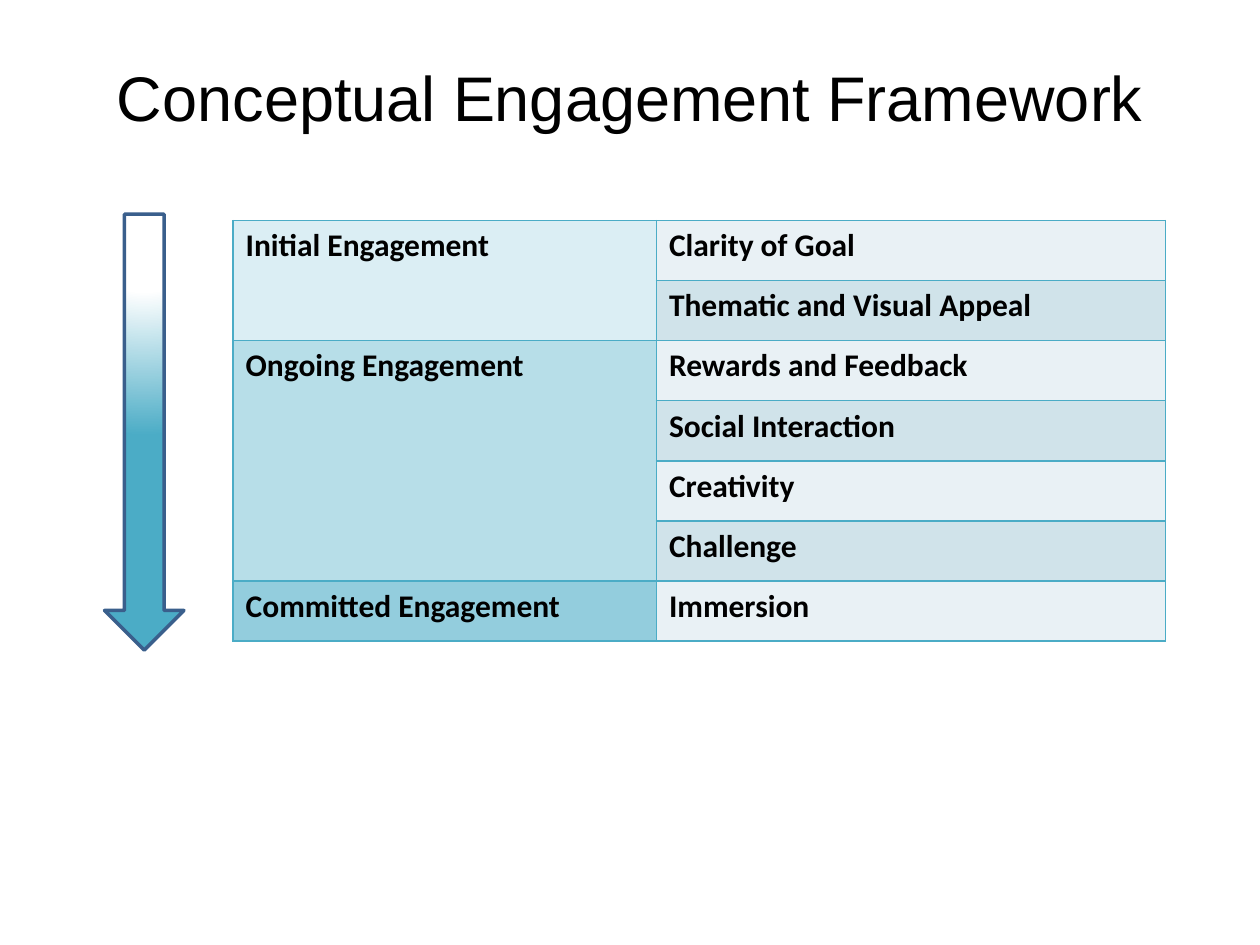
from dataclasses import dataclass

import pptx
import pptx.dml.color
import pptx.enum.shapes
import pptx.enum.text
import pptx.oxml
import pptx.oxml.ns
import pptx.util

Inches = pptx.util.Inches
Pt = pptx.util.Pt
RGBColor = pptx.dml.color.RGBColor

BLACK = RGBColor(0x00, 0x00, 0x00)
WHITE = RGBColor(0xFF, 0xFF, 0xFF)
TEAL = RGBColor(0x4B, 0xAC, 0xC6)
NAVY = RGBColor(0x3A, 0x5F, 0x8C)
STRIPES = (RGBColor(0xE9, 0xF1, 0xF5), RGBColor(0xD0, 0xE3, 0xEA))
NS = pptx.oxml.ns.nsdecls("a")


@dataclass
class Stage:
    name: str
    color: RGBColor
    factors: tuple[str, ...]


STAGES = (
    Stage("Initial Engagement", RGBColor(0xDB, 0xEE, 0xF4),
          ("Clarity of Goal", "Thematic and Visual Appeal")),
    Stage("Ongoing Engagement", RGBColor(0xB7, 0xDE, 0xE8),
          ("Rewards and Feedback", "Social Interaction", "Creativity", "Challenge")),
    Stage("Committed Engagement", RGBColor(0x93, 0xCD, 0xDD), ("Immersion",)),
)


def add_run(p, text: str, font: str, size: int, bold: bool = False) -> None:
    r = p.add_run()
    r.text = text
    r.font.name = font
    r.font.size = Pt(size)
    r.font.bold = bold
    r.font.color.rgb = BLACK


def add_title(s, text: str) -> None:
    sp = s.shapes.add_textbox(Inches(0.5), Inches(0.3), Inches(9), Inches(0.93))
    tf = sp.text_frame
    tf.word_wrap = True
    tf.vertical_anchor = pptx.enum.text.MSO_ANCHOR.MIDDLE
    p = tf.paragraphs[0]
    p.alignment = pptx.enum.text.PP_ALIGN.CENTER
    add_run(p, text, "Arial", 36)


def style_cell(cell, color: RGBColor) -> None:
    tc_pr = cell._tc.get_or_add_tcPr()
    for side in ("lnL", "lnR", "lnT", "lnB"):
        tc_pr.append(pptx.oxml.parse_xml(
            f'<a:{side} {NS} w="{Pt(1)}"><a:solidFill>'
            f'<a:srgbClr val="{TEAL}"/></a:solidFill></a:{side}>'))
    cell.fill.solid()
    cell.fill.fore_color.rgb = color


def fill_cell(cell, text: str) -> None:
    add_run(cell.text_frame.paragraphs[0], text, "Calibri", 18, True)


def add_stage_table(s, stages: tuple[Stage, ...]) -> None:
    count = sum(len(stage.factors) for stage in stages)
    frame = s.shapes.add_table(count, 2, Inches(1.85), Inches(1.75),
                               Inches(7.4), Inches(3.34))
    table = frame.table
    table.first_row = False
    table.horz_banding = False
    for column, width in zip(table.columns, (3.36, 4.04)):
        column.width = Inches(width)
    row = 0
    for stage in stages:
        first, last = row, row + len(stage.factors) - 1
        for factor in stage.factors:
            style_cell(table.cell(row, 0), stage.color)
            style_cell(table.cell(row, 1), STRIPES[row % 2])
            fill_cell(table.cell(row, 1), factor)
            row += 1
        if last > first:
            table.cell(first, 0).merge(table.cell(last, 0))
        fill_cell(table.cell(first, 0), stage.name)


def add_progress_arrow(s) -> None:
    sp = s.shapes.add_shape(pptx.enum.shapes.MSO_SHAPE.DOWN_ARROW,
                            Inches(0.83), Inches(1.7), Inches(0.63), Inches(3.46))
    sp.shadow.inherit = False
    sp.line.color.rgb = NAVY
    sp.line.width = Pt(2)
    sp.fill.gradient()
    stops = "".join(
        f'<a:gs pos="{pos * 1000}"><a:srgbClr val="{color}"/></a:gs>'
        for pos, color in ((0, WHITE), (35, WHITE), (100, TEAL)))
    sp_pr = sp._element.spPr
    sp_pr.replace(
        sp_pr.find(pptx.oxml.ns.qn("a:gradFill")),
        pptx.oxml.parse_xml(
            f'<a:gradFill {NS} rotWithShape="1"><a:gsLst>{stops}</a:gsLst>'
            '<a:path path="circle"><a:fillToRect l="50000" t="-80000" '
            'r="50000" b="180000"/></a:path></a:gradFill>'))


def main() -> None:
    prs = pptx.Presentation()
    prs.slide_width = Inches(10)
    prs.slide_height = Inches(7.5)
    s = prs.slides.add_slide(prs.slide_layouts[6])
    add_title(s, "Conceptual Engagement Framework")
    add_stage_table(s, STAGES)
    add_progress_arrow(s)
    prs.save("out.pptx")


if __name__ == "__main__":
    main()
